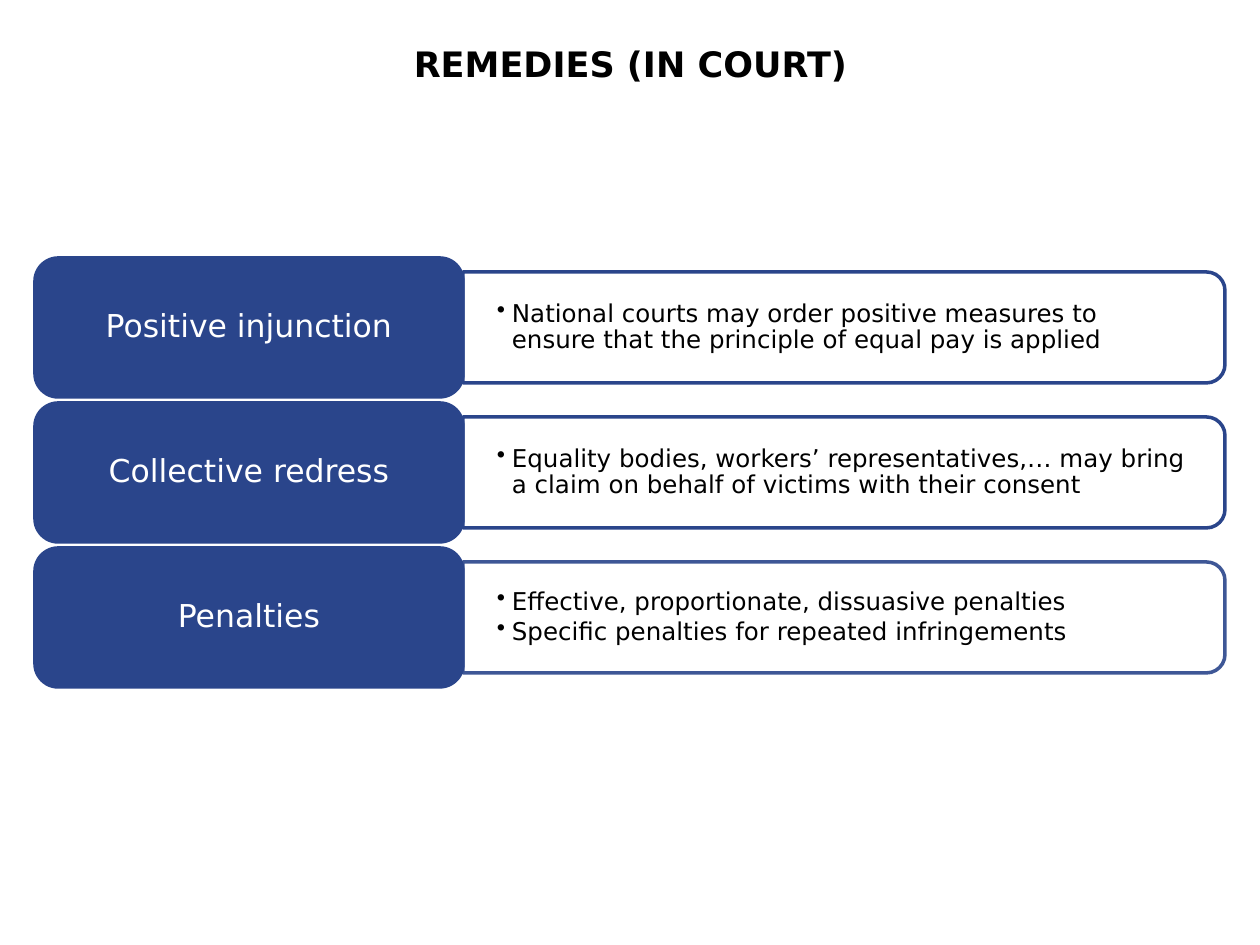
from lxml import etree
from pptx import Presentation
from pptx import util as u
from pptx.dml.color import RGBColor
from pptx.enum import shapes, text
from pptx.oxml.ns import qn

PX = 914400 / 126
FONT = "DejaVu Sans"
BLUE = RGBColor(0x2A, 0x45, 0x8B)
WHITE = RGBColor(0xFF, 0xFF, 0xFF)
BLACK = RGBColor(0, 0, 0)

ROW_TOP, ROW_PITCH, ROW_H = 258, 145, 139
LABEL_LEFT, LABEL_W = 35, 428
PANEL_LEFT, PANEL_W, PANEL_H = LABEL_LEFT + LABEL_W, 762, 111
BODY_W, BODY_H = 757, 100

REMEDIES = [
    ("Positive injunction",
     ["National courts may order positive measures to ensure that the "
      "principle of equal pay is applied"], 100),
    ("Collective redress",
     ["Equality bodies, workers’ representatives,… may bring a claim on "
      "behalf of victims with their consent"], 100),
    ("Penalties",
     ["Effective, proportionate, dissuasive penalties",
      "Specific penalties for repeated infringements"], 90),
]


def box(*lengths):
    return [u.Emu(round(n * PX)) for n in lengths]


def add_run(p, words, size, color, bold=False):
    r = p.add_run()
    r.text = words
    r.font.name = FONT
    r.font.size = u.Pt(size)
    r.font.bold = bold
    r.font.color.rgb = color


def set_frame(tf, side, end):
    tf.word_wrap = True
    tf.vertical_anchor = text.MSO_ANCHOR.MIDDLE
    tf.margin_left, tf.margin_right, tf.margin_top, tf.margin_bottom = box(
        side, side, end, end)


def set_alpha(fill_parent, percent):
    color = fill_parent.find(qn("a:solidFill"))[0]
    etree.SubElement(color, qn("a:alpha"), val=str(percent * 1000))


def add_block(s, kind, bounds, fill):
    sp = s.shapes.add_shape(kind, *box(*bounds))
    sp.shadow.inherit = False
    sp.fill.solid()
    sp.fill.fore_color.rgb = fill
    sp.line.color.rgb = BLUE
    sp.line.width = u.Pt(2)
    return sp


def add_title(s, words):
    sp = s.shapes.title
    sp.left, sp.top, sp.width, sp.height = box(35, 26, 1191, 76)
    tf = sp.text_frame
    tf.vertical_anchor = text.MSO_ANCHOR.MIDDLE
    p = tf.paragraphs[0]
    p.alignment = text.PP_ALIGN.CENTER
    add_run(p, words, 20, BLACK, bold=True)


def add_panel(s, middle, line_alpha):
    left = PANEL_LEFT + (PANEL_W - PANEL_H) / 2
    sp = add_block(s, shapes.MSO_SHAPE.ROUND_2_SAME_RECTANGLE,
                   (left, middle - PANEL_W / 2, PANEL_H, PANEL_W), WHITE)
    sp.rotation = 90
    set_alpha(sp.element.spPr, 90)
    if line_alpha < 100:
        set_alpha(sp.element.spPr.find(qn("a:ln")), line_alpha)


def add_bullets(s, middle, items):
    sp = s.shapes.add_textbox(
        *box(PANEL_LEFT, middle - BODY_H / 2, BODY_W, BODY_H))
    tf = sp.text_frame
    set_frame(tf, 34, 18)
    for i, words in enumerate(items):
        p = tf.add_paragraph() if i else tf.paragraphs[0]
        p.level = 1
        p.line_spacing = 0.9
        p.space_after = u.Pt(2)
        pPr = p._p.get_or_add_pPr()
        indent = box(15)[0]
        pPr.set("marL", str(indent))
        pPr.set("indent", str(-indent))
        etree.SubElement(pPr, qn("a:buChar"), char="•")
        add_run(p, words, 14, BLACK)


def add_label(s, top, words):
    sp = add_block(s, shapes.MSO_SHAPE.ROUNDED_RECTANGLE,
                   (LABEL_LEFT, top, LABEL_W, ROW_H), BLUE)
    tf = sp.text_frame
    set_frame(tf, 9, 5)
    p = tf.paragraphs[0]
    p.alignment = text.PP_ALIGN.CENTER
    p.line_spacing = 0.9
    add_run(p, words, 18, WHITE)


def main():
    prs = Presentation()
    prs.slide_width, prs.slide_height = box(1260, 945)
    s = prs.slides.add_slide(prs.slide_layouts[5])
    add_title(s, "REMEDIES (IN COURT)")
    for i, (label, items, line_alpha) in enumerate(REMEDIES):
        top = ROW_TOP + i * ROW_PITCH
        middle = top + ROW_H / 2
        add_panel(s, middle, line_alpha)
        add_bullets(s, middle, items)
        add_label(s, top, label)
    prs.save("out.pptx")


if __name__ == "__main__":
    main()
